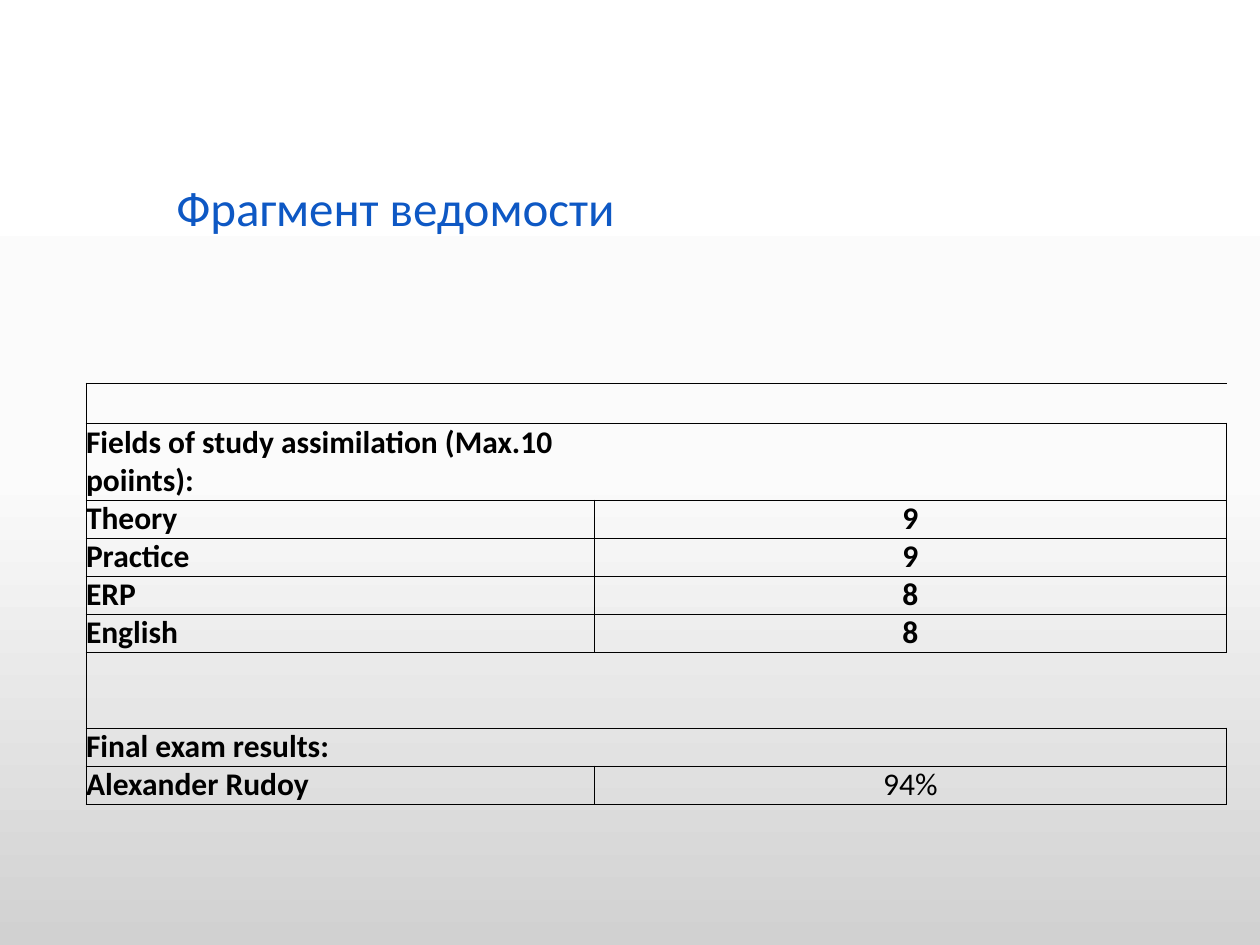
from dataclasses import dataclass

from lxml.etree import SubElement
from pptx import Presentation
from pptx.dml.color import RGBColor
from pptx.enum.text import MSO_ANCHOR as Anchor, PP_ALIGN as Align
from pptx.oxml.ns import qn
from pptx.util import Emu, Pt

EMU_PER_PX = 914400 / 126
FONT = "Calibri"
INK = "000000"
TITLE_BLUE = "0E58C4"
BACKDROP = {0: "FFFFFF", 50: "FBFBFB", 100: "D1D1D1"}
NO_GRID_STYLE = "{2D5ABB26-0587-4C30-8999-92F81FD0307C}"
COLUMNS = [508, 33] + [100] * 6
LAST = len(COLUMNS) - 1


@dataclass(frozen=True)
class Row:
    height: int
    label: str = ""
    score: str = ""
    score_bold: bool = True
    empty_size: int = 18


ROWS = [
    Row(20, empty_size=8),
    Row(20, empty_size=8),
    Row(77, "Fields of study assimilation (Max.10 poiints):"),
    Row(38, "Theory", "9"),
    Row(38, "Practice", "9"),
    Row(38, "ERP", "8"),
    Row(38, "English", "8"),
    Row(38),
    Row(38),
    Row(38, "Final exam results:"),
    Row(38, "Alexander Rudoy", "94%", score_bold=False),
]


def px(length: int) -> Emu:
    return Emu(round(length * EMU_PER_PX))


def rgb(colour: str) -> RGBColor:
    return RGBColor.from_string(colour)


def write(frame, words: str, size: int, colour: str, bold: bool = False,
          align=Align.LEFT) -> None:
    paragraph = frame.paragraphs[0]
    paragraph.alignment = align
    run = paragraph.add_run()
    run.text = words
    run.font.color.rgb = rgb(colour)
    for name, value in {"name": FONT, "size": Pt(size), "bold": bold}.items():
        setattr(run.font, name, value)


def paint_backdrop(slide) -> None:
    fill = slide.background.fill
    fill.gradient()
    fill.gradient_angle = 270
    stops = next(slide.element.iter(qn("a:gsLst")))
    for stop in list(stops):
        stops.remove(stop)
    for percent, colour in BACKDROP.items():
        stop = SubElement(stops, qn("a:gs"), pos=str(percent * 1000))
        SubElement(stop, qn("a:srgbClr"), val=colour)


def border_sides(row: Row, index: int, column: int) -> str:
    if row.score:
        return "LRTB"
    left = "L" if column == 0 else ""
    if row.label:
        return left + ("R" if column == LAST else "") + "TB"
    return left + ("T" if index == 0 else "")


def draw_borders(cell, sides: str) -> None:
    properties = cell._tc.get_or_add_tcPr()
    for side in sides:
        line = SubElement(properties, qn(f"a:ln{side}"), w=str(Pt(0.5)))
        SubElement(SubElement(line, qn("a:solidFill")), qn("a:srgbClr"), val=INK)


def draw_cell(cell, row: Row, index: int, column: int) -> None:
    cell_format = {"margin_left": 0, "margin_right": 0, "margin_top": 0,
                   "margin_bottom": 0, "vertical_anchor": Anchor.BOTTOM}
    for name, value in cell_format.items():
        setattr(cell, name, value)
    draw_borders(cell, border_sides(row, index, column))
    cell.fill.background()
    if column == 0 and row.label:
        write(cell.text_frame, row.label, 18, INK, True)
    elif column == 1 and row.score:
        write(cell.text_frame, row.score, 18, INK, row.score_bold, Align.CENTER)
    else:
        SubElement(cell.text_frame.paragraphs[0]._p, qn("a:endParaRPr"),
                   sz=str(row.empty_size * 100))


def draw_title(slide) -> None:
    frame = slide.shapes.add_textbox(px(164), px(204), px(1068), px(39)).text_frame
    for name, value in {"word_wrap": True, "vertical_anchor": Anchor.BOTTOM}.items():
        setattr(frame, name, value)
    write(frame, "Фрагмент ведомости", 28, TITLE_BLUE)
    frame.paragraphs[0].line_spacing = 0.9


def draw_grades(slide) -> None:
    grades = slide.shapes.add_table(
        len(ROWS), len(COLUMNS), px(86), px(383),
        px(sum(COLUMNS)), px(sum(row.height for row in ROWS))).table
    for name in ("first_row", "horz_banding"):
        setattr(grades, name, False)
    next(grades._tbl.iter(qn("a:tableStyleId"))).text = NO_GRID_STYLE
    for column, width in enumerate(COLUMNS):
        grades.columns[column].width = px(width)
    for index, row in enumerate(ROWS):
        grades.rows[index].height = px(row.height)
        if row.score:
            grades.cell(index, 1).merge(grades.cell(index, LAST))
        for column in range(len(COLUMNS)):
            draw_cell(grades.cell(index, column), row, index, column)


def main() -> None:
    deck = Presentation()
    deck.slide_width, deck.slide_height = px(1260), px(945)
    slide = deck.slides.add_slide(deck.slide_layouts[6])
    paint_backdrop(slide)
    draw_title(slide)
    draw_grades(slide)
    deck.save("out.pptx")


if __name__ == "__main__":
    main()
